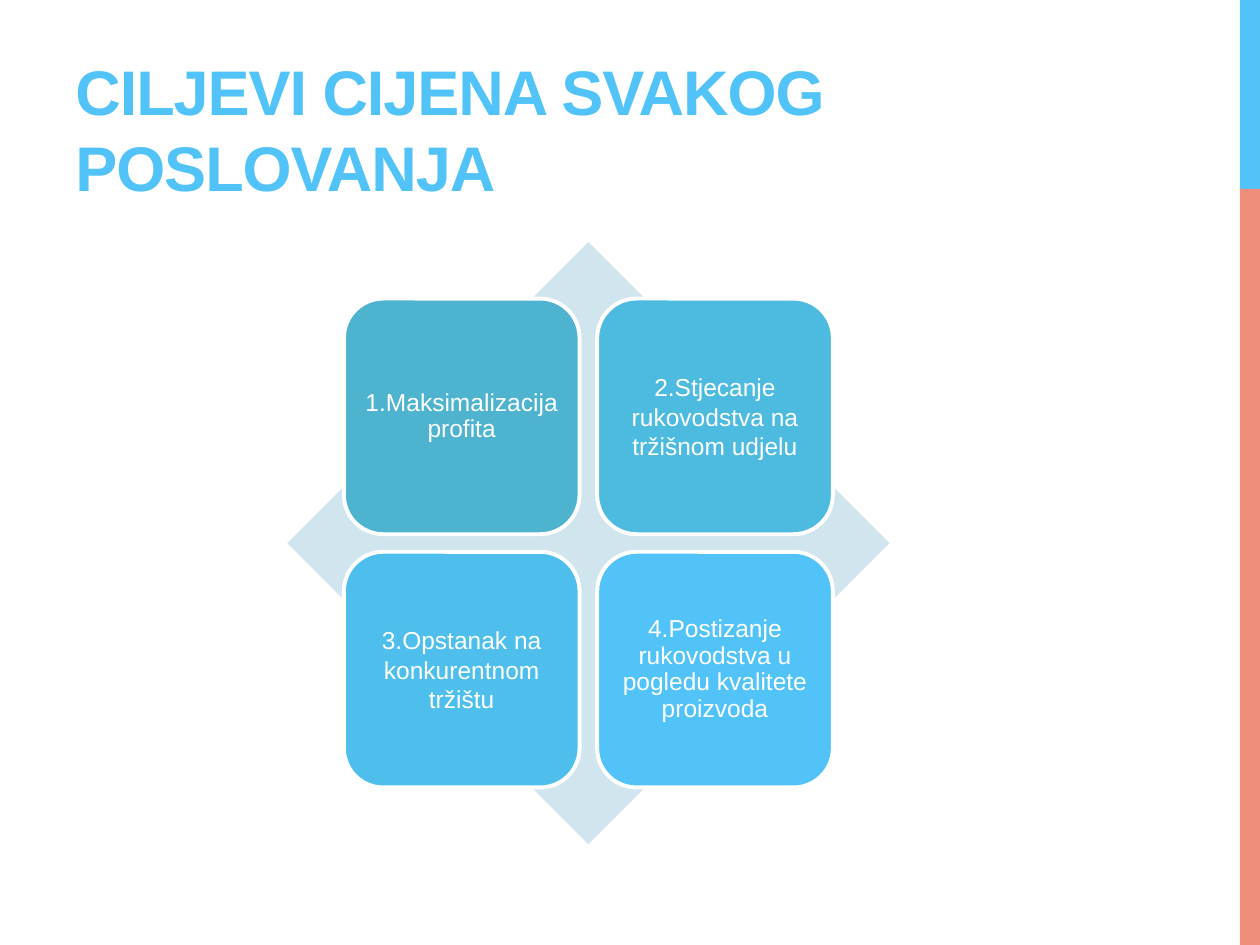
from dataclasses import dataclass
from typing import Optional

from pptx import Presentation
from pptx.dml.color import RGBColor
from pptx.enum.shapes import MSO_SHAPE as Preset
from pptx.enum.text import MSO_ANCHOR as Anchor, PP_ALIGN as Align
from pptx.util import Inches, Pt

FONT = "Arial"
WHITE, SKY, CORAL, PALE = "FFFFFF", "51C3F9", "EF8E7B", "D0E5ED"


@dataclass
class Goal:
    text: str
    fill: str
    tight: bool = False


GOALS = [
    Goal("1.Maksimalizacija profita", "4EB3CF", tight=True),
    Goal("2.Stjecanje rukovodstva na tržišnom udjelu", "4DBADF"),
    Goal("3.Opstanak na konkurentnom tržištu", "4EBFED"),
    Goal("4.Postizanje rukovodstva u pogledu kvalitete proizvoda", SKY, tight=True),
]


def color(value: str) -> RGBColor:
    return RGBColor.from_string(value)


def add_block(slide, preset, left: float, top: float, width: float, height: float,
              fill: str, outline: Optional[str] = None):
    block = slide.shapes.add_shape(
        preset, Inches(left), Inches(top), Inches(width), Inches(height))
    block.shadow.inherit = False
    block.fill.solid()
    block.fill.fore_color.rgb = color(fill)
    if outline:
        block.line.color.rgb = color(outline)
        block.line.width = Pt(2.25)
    else:
        block.line.fill.background()
    return block


def add_run(paragraph, text: str, size: float, text_color: str, bold: bool = False):
    run = paragraph.add_run()
    run.text = text
    run.font.name = FONT
    run.font.size = Pt(size)
    run.font.bold = bold
    run.font.color.rgb = color(text_color)
    return run


def add_title(slide, text: str) -> None:
    title = slide.shapes.add_textbox(Inches(0.5), Inches(0.17), Inches(6.33), Inches(1.5))
    frame = title.text_frame
    frame.word_wrap = True
    frame.vertical_anchor = Anchor.BOTTOM
    run = add_run(frame.paragraphs[0], text, 36, SKY, bold=True)
    run.font._element.set("spc", "-60")


def add_goal(slide, goal: Goal, left: float, top: float, side: float) -> None:
    card = add_block(slide, Preset.ROUNDED_RECTANGLE, left, top, side, side,
                     goal.fill, outline=WHITE)
    frame = card.text_frame
    frame.word_wrap = True
    frame.vertical_anchor = Anchor.MIDDLE
    frame.margin_left = frame.margin_right = Inches(0.06)
    frame.margin_top = frame.margin_bottom = Inches(0.06)
    paragraph = frame.paragraphs[0]
    paragraph.alignment = Align.CENTER
    if goal.tight:
        paragraph.line_spacing = 0.9
        paragraph.space_after = Pt(4.9)
    add_run(paragraph, goal.text, 14, WHITE)


def main() -> None:
    deck = Presentation()
    deck.slide_width, deck.slide_height = Inches(10), Inches(7.5)
    slide = deck.slides.add_slide(deck.slide_layouts[6])

    # Side stripe
    add_block(slide, Preset.RECTANGLE, 9.84, 0, 0.16, 1.5, SKY)
    add_block(slide, Preset.RECTANGLE, 9.84, 1.5, 0.16, 6, CORAL)

    add_title(slide, "CILJEVI CIJENA SVAKOG POSLOVANJA")

    # Diamond with the four goals in a two-by-two grid
    add_block(slide, Preset.DIAMOND, 2.28, 1.92, 4.78, 4.78, PALE)
    side, pitch = 1.87, 2.01
    for index, goal in enumerate(GOALS):
        row, column = divmod(index, 2)
        add_goal(slide, goal, 2.73 + column * pitch, 2.37 + row * pitch, side)

    deck.save("out.pptx")


if __name__ == "__main__":
    main()
